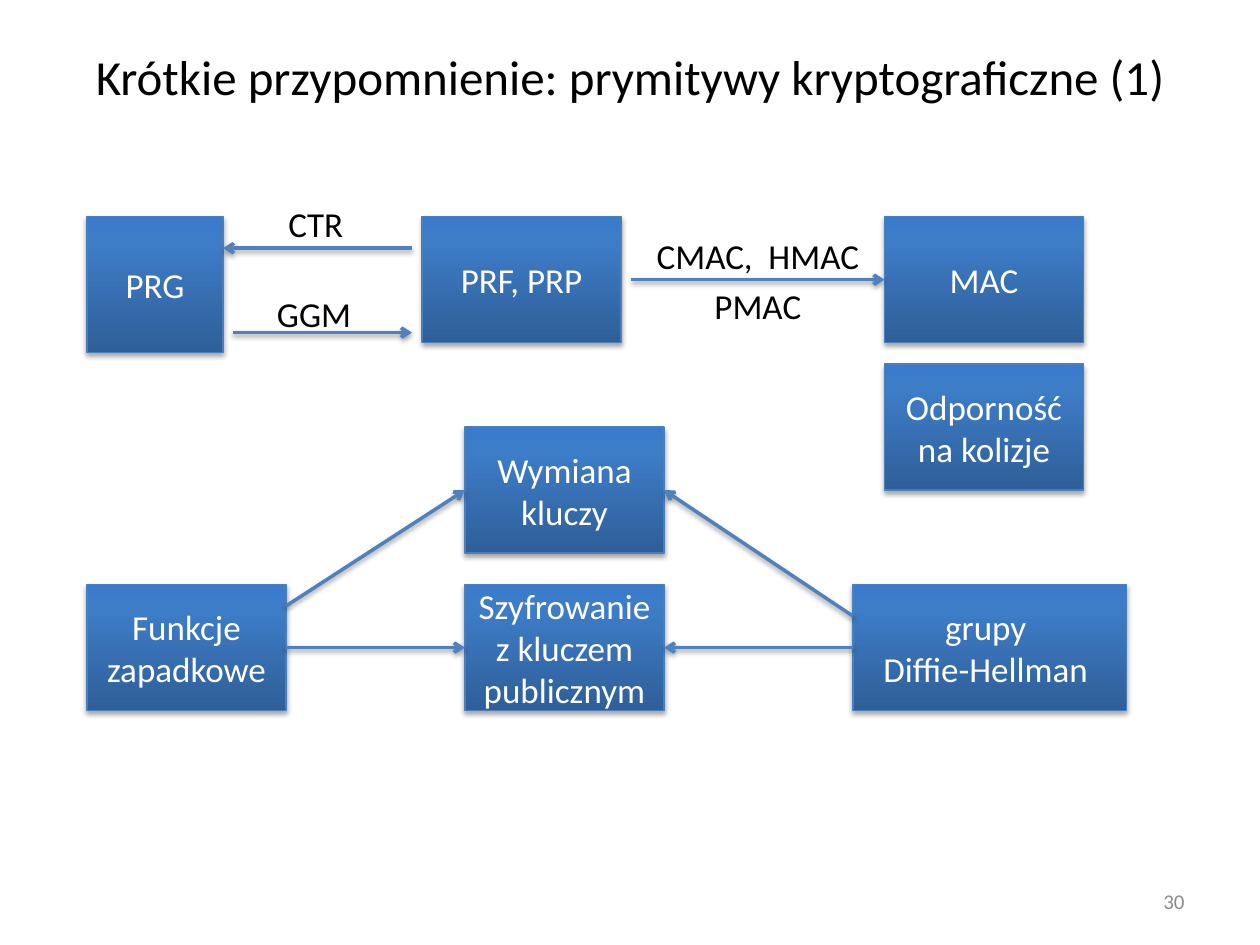
from copy import deepcopy

from lxml import etree
from pptx import Presentation
from pptx.dml.color import RGBColor
from pptx.enum.shapes import MSO_CONNECTOR, MSO_SHAPE
from pptx.enum.text import MSO_ANCHOR, MSO_AUTO_SIZE, PP_ALIGN
from pptx.oxml.ns import qn
from pptx.util import Inches, Pt

FONT = "Calibri"
BLACK = RGBColor(0x00, 0x00, 0x00)
WHITE = RGBColor(0xFF, 0xFF, 0xFF)
GRAY = RGBColor(0x8C, 0x8C, 0x8C)
BOX_LINE = RGBColor(0x4B, 0x7E, 0xBC)
ARROW = RGBColor(0x4F, 0x81, 0xBD)
GRADIENT = [
    (0, RGBColor(0x2F, 0x5F, 0x99)),
    (0.8, RGBColor(0x3D, 0x7C, 0xC7)),
    (1, RGBColor(0x3A, 0x7C, 0xCB)),
]
BOX_WIDTH, BOX_HEIGHT = 1.58, 1


def add_text(frame, text, size, color, align):
    """Write one paragraph; a newline becomes a line break."""
    paragraph = frame.paragraphs[0]
    paragraph.alignment = align
    for index, line in enumerate(text.split("\n")):
        if index:
            paragraph.add_line_break()
        run = paragraph.add_run()
        run.text = line
        run.font.name = FONT
        run.font.size = Pt(size)
        run.font.color.rgb = color
    return paragraph


def add_shadow(shape, distance, opacity):
    properties = shape._element.spPr
    effects = etree.SubElement(properties, qn("a:effectLst"))
    shadow = etree.SubElement(
        effects, qn("a:outerShdw"), blurRad=str(Pt(3.1)),
        dist=str(Pt(distance)), dir="5400000", rotWithShape="0")
    color = etree.SubElement(shadow, qn("a:srgbClr"), val="000000")
    etree.SubElement(color, qn("a:alpha"), val=str(opacity * 1000))


def add_box(slide, text, left, top, width=BOX_WIDTH, height=BOX_HEIGHT):
    shape = slide.shapes.add_shape(
        MSO_SHAPE.RECTANGLE, Inches(left), Inches(top), Inches(width), Inches(height))
    # Three-stop gradient, dark at the bottom
    fill = shape.fill
    fill.gradient()
    fill.gradient_angle = 90
    stop_list = fill._xPr.find(qn("a:gradFill")).find(qn("a:gsLst"))
    stop_list.append(deepcopy(stop_list[-1]))
    for stop, (position, color) in zip(fill.gradient_stops, GRADIENT):
        stop.position = position
        stop.color.rgb = color
    shape.line.color.rgb = BOX_LINE
    shape.line.width = Pt(0.75)
    add_shadow(shape, 1.8, 35)
    frame = shape.text_frame
    frame.word_wrap = True
    frame.vertical_anchor = MSO_ANCHOR.MIDDLE
    add_text(frame, text, 20, WHITE, PP_ALIGN.CENTER)


def add_arrow(slide, start, end):
    points = [Inches(value) for value in (*start, *end)]
    connector = slide.shapes.add_connector(MSO_CONNECTOR.STRAIGHT, *points)
    connector.line.color.rgb = ARROW
    connector.line.width = Pt(2)
    etree.SubElement(connector.line._get_or_add_ln(), qn("a:tailEnd"), type="arrow")
    add_shadow(connector, 1.6, 38)


def add_label(slide, text, left, top, width, height, align=PP_ALIGN.LEFT):
    label = slide.shapes.add_textbox(
        Inches(left), Inches(top), Inches(width), Inches(height))
    label.text_frame.word_wrap = False
    label.text_frame.auto_size = MSO_AUTO_SIZE.SHAPE_TO_FIT_TEXT
    return add_text(label.text_frame, text, 20, BLACK, align)


def add_title(slide, left, top, width, height):
    title = slide.shapes.title
    title.left, title.top = Inches(left), Inches(top)
    title.width, title.height = Inches(width), Inches(height)
    title.text_frame.vertical_anchor = MSO_ANCHOR.MIDDLE
    add_text(title.text_frame, "Krótkie przypomnienie: prymitywy kryptograficzne (1)",
             28, BLACK, PP_ALIGN.CENTER)


def add_page_number(slide, left, top, width, height):
    number = slide.shapes.add_textbox(
        Inches(left), Inches(top), Inches(width), Inches(height))
    number.text_frame.word_wrap = True
    number.text_frame.vertical_anchor = MSO_ANCHOR.MIDDLE
    add_text(number.text_frame, "30", 12, GRAY, PP_ALIGN.RIGHT)


def add_symmetric_primitives(slide, left, top):
    """Generator, function and MAC boxes with the constructions between them."""
    function_left, mac_left = left + 2.66, left + 6.33
    generator_size = 1.08
    add_box(slide, "PRG", left, top, generator_size, generator_size)
    add_box(slide, "PRF, PRP", function_left, top)
    add_box(slide, "MAC", mac_left, top)
    add_box(slide, "Odporność na kolizje", mac_left, top + 1.17)

    # Arrows stop short of the box they start from
    gap = 0.08
    generator_right = left + generator_size
    add_arrow(slide, (generator_right + gap, top + 0.92), (function_left - gap, top + 0.92))
    add_arrow(slide, (function_left - gap, top + 0.25), (generator_right, top + 0.25))
    add_arrow(slide, (function_left + BOX_WIDTH + gap, top + 0.5), (mac_left, top + 0.5))

    add_label(slide, "GGM", left + 1.41, top + 0.55, 0.8, 0.44)
    add_label(slide, "CTR", left + 1.5, top - 0.16, 0.64, 0.44)
    mac_label = add_label(slide, "CMAC,  HMAC\nPMAC", left + 4.41, top + 0.02,
                          1.83, 0.9, PP_ALIGN.CENTER)
    mac_label.line_spacing = Pt(29)


def add_public_key_primitives(slide, left, top):
    """Trapdoor functions and groups, both leading to the two middle boxes."""
    middle_left, group_left = left + 3, left + 6.08
    exchange_top, encryption_top = top, top + 1.25
    add_box(slide, "Wymiana kluczy", middle_left, exchange_top)
    add_box(slide, "Funkcje zapadkowe", left, encryption_top)
    add_box(slide, "Szyfrowanie z kluczem publicznym", middle_left, encryption_top)
    add_box(slide, "grupy \nDiffie-Hellman ", group_left, encryption_top, 2.17)

    exchange_middle = exchange_top + BOX_HEIGHT / 2
    encryption_middle = encryption_top + BOX_HEIGHT / 2
    sides = [
        (left + BOX_WIDTH, middle_left, 0.17),
        (group_left, middle_left + BOX_WIDTH, 0.25),
    ]
    for start, end, offset in sides:
        add_arrow(slide, (start, encryption_middle), (end, encryption_middle))
        add_arrow(slide, (start, encryption_top + offset), (end, exchange_middle))


def main():
    presentation = Presentation()
    presentation.slide_width = Inches(10)
    presentation.slide_height = Inches(7.5)
    slide = presentation.slides.add_slide(presentation.slide_layouts[5])
    add_title(slide, 0.5, 0.3, 9, 0.61)
    add_page_number(slide, 7.17, 6.95, 2.33, 0.4)
    add_symmetric_primitives(slide, 0.69, 1.72)
    add_public_key_primitives(slide, 0.69, 3.39)
    presentation.save("out.pptx")


if __name__ == "__main__":
    main()
